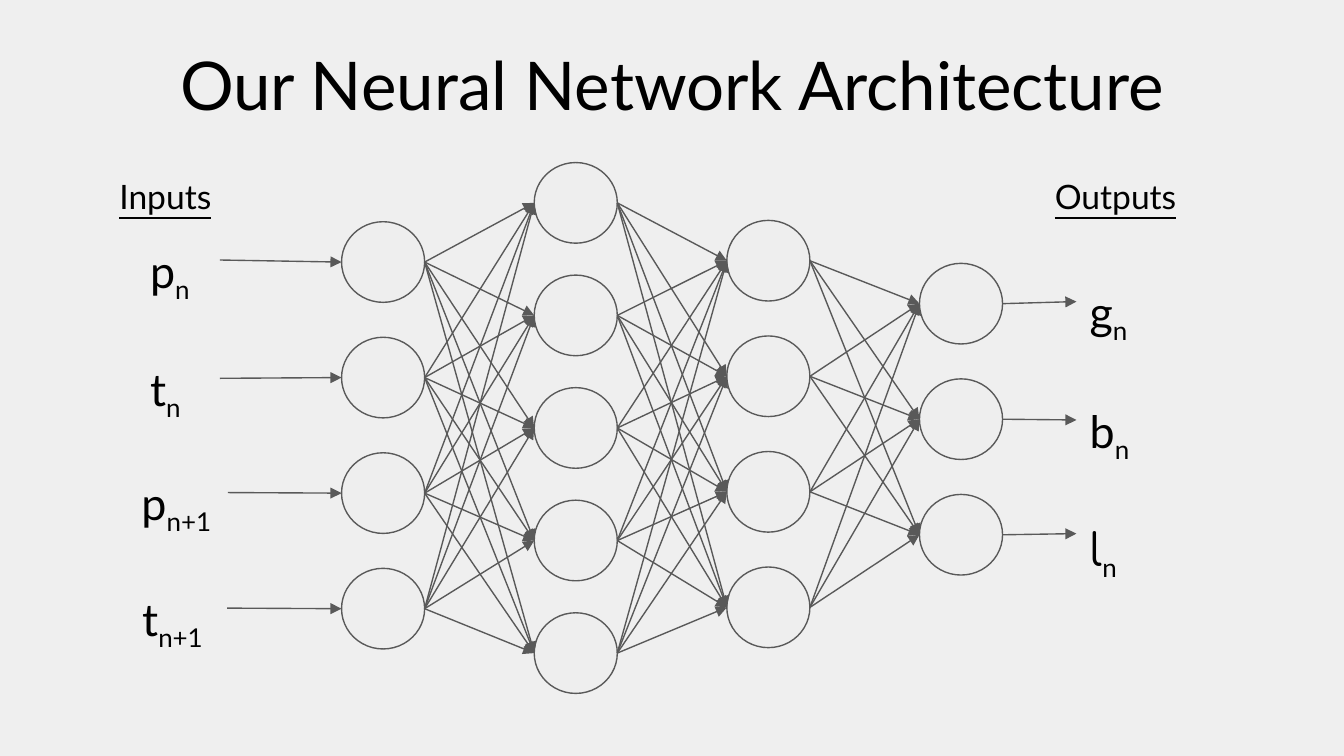
import dataclasses
import itertools

import pptx
import pptx.dml.color
import pptx.enum.shapes
import pptx.enum.text
import pptx.oxml
import pptx.oxml.ns
import pptx.util

Pt = pptx.util.Pt
RGB = pptx.dml.color.RGBColor.from_string


@dataclasses.dataclass(frozen=True)
class Theme:
    back: str = "EFEFEF"
    fill: str = "EEEEEE"
    line: str = "595959"
    ink: str = "000000"
    font: str = "Lato"
    round: str = "Comfortaa"
    title: float = 36
    head: float = 18
    label: float = 24
    stroke: float = 0.75
    inset: float = 7.2


THEME = Theme()
WIDE, HIGH = 44.5, 43.2
LEFT, PITCH = 183, 103.2
LAYERS = [(4, 118.8, 61.9), (5, 87.1, 60.3), (4, 118.1, 61.9), (3, 141.1, 61.9)]
HEADS = [("Inputs", 56.9, 87.1, 77), ("Outputs", 558, 87.1, 95)]
INPUTS = [
    ("p", "n", 73.3, 123.1, 44.5),
    ("t", "n", 73.3, 186.5, 44.5),
    ("p", "n+1", 68.7, 247.7, 53.4),
    ("t", "n+1", 69.1, 309.6, 52.6),
]
OUTPUTS = [
    ("g", "n", 145.4, 32.4, THEME.font),
    ("b", "n", 208.8, 32.4, THEME.font),
    ("l", "n", 272.2, 27.4, THEME.round),
]


def add_run(para, text, size, font=THEME.font, under=False, sub=False):
    run = para.add_run()
    run.text = text
    run.font.name = font
    run.font.size = Pt(size)
    run.font.color.rgb = RGB(THEME.ink)
    if under:
        run.font.underline = True
    if sub:
        run._r.get_or_add_rPr().set("baseline", "-25000")


def set_frame(frame):
    frame.word_wrap = True
    frame.auto_size = pptx.enum.text.MSO_AUTO_SIZE.NONE
    frame.margin_left = frame.margin_right = Pt(THEME.inset)
    frame.margin_top = frame.margin_bottom = Pt(THEME.inset)


def add_title(slide, text):
    title = slide.shapes.title
    title.left, title.top = Pt(0), Pt(13.7)
    title.width, title.height = Pt(720), Pt(59.8)
    frame = title.text_frame
    set_frame(frame)
    frame.vertical_anchor = pptx.enum.text.MSO_ANCHOR.BOTTOM
    para = frame.paragraphs[0]
    para.alignment = pptx.enum.text.PP_ALIGN.CENTER
    add_run(para, text, THEME.title)


def add_box(slide, left, top, width, height=32.4):
    box = slide.shapes.add_textbox(Pt(left), Pt(top), Pt(width), Pt(height))
    set_frame(box.text_frame)
    return box


def add_head(slide, text, left, top, width):
    box = add_box(slide, left, top, width)
    add_run(box.text_frame.paragraphs[0], text, THEME.head, under=True)


def add_label(slide, name, sub, left, top, width, height=32.4, font=THEME.font):
    box = add_box(slide, left, top, width, height)
    para = box.text_frame.paragraphs[0]
    add_run(para, name, THEME.label, font)
    add_run(para, sub, THEME.label, sub=True)
    return box


def add_node(slide, left, top):
    oval = pptx.enum.shapes.MSO_SHAPE.OVAL
    node = slide.shapes.add_shape(oval, Pt(left), Pt(top), Pt(WIDE), Pt(HIGH))
    node.shadow.inherit = False
    node.fill.solid()
    node.fill.fore_color.rgb = RGB(THEME.fill)
    node.line.color.rgb = RGB(THEME.line)
    node.line.width = Pt(THEME.stroke)
    return node


def add_layer(slide, col, count, top, step):
    left = LEFT + col * PITCH
    return [add_node(slide, left, top + row * step) for row in range(count)]


def add_arrow(slide, start, end):
    straight = pptx.enum.shapes.MSO_CONNECTOR.STRAIGHT
    arrow = slide.shapes.add_connector(
        straight,
        start.left + start.width,
        start.top + start.height // 2,
        end.left,
        end.top + end.height // 2,
    )
    arrow.line.color.rgb = RGB(THEME.line)
    arrow.line.width = Pt(THEME.stroke)
    tip = pptx.oxml.parse_xml(
        f'<a:tailEnd {pptx.oxml.ns.nsdecls("a")} type="triangle"/>'
    )
    arrow.line._get_or_add_ln().append(tip)
    flat = pptx.oxml.parse_xml(f'<a:effectLst {pptx.oxml.ns.nsdecls("a")}/>')
    arrow._element.spPr.append(flat)
    return arrow


def main():
    deck = pptx.Presentation()
    deck.slide_width, deck.slide_height = Pt(720), Pt(405)
    slide = deck.slides.add_slide(deck.slide_layouts[0])
    empty = slide.placeholders[1]._element
    empty.getparent().remove(empty)
    slide.background.fill.solid()
    slide.background.fill.fore_color.rgb = RGB(THEME.back)

    add_title(slide, "Our Neural Network Architecture")
    for head in HEADS:
        add_head(slide, *head)
    ins = [add_label(slide, *item) for item in INPUTS]
    outs = [
        add_label(slide, name, sub, 576.7, top, 44.5, height, font)
        for name, sub, top, height, font in OUTPUTS
    ]

    layers = [add_layer(slide, col, *layer) for col, layer in enumerate(LAYERS)]
    for near, far in itertools.pairwise(layers):
        for start, end in itertools.product(near, far):
            add_arrow(slide, start, end)
    for label, node in zip(ins, layers[0]):
        add_arrow(slide, label, node).begin_connect(label, 3)
    for node, label in zip(layers[-1], outs):
        add_arrow(slide, node, label).end_connect(label, 1)

    deck.save("out.pptx")


if __name__ == "__main__":
    main()
